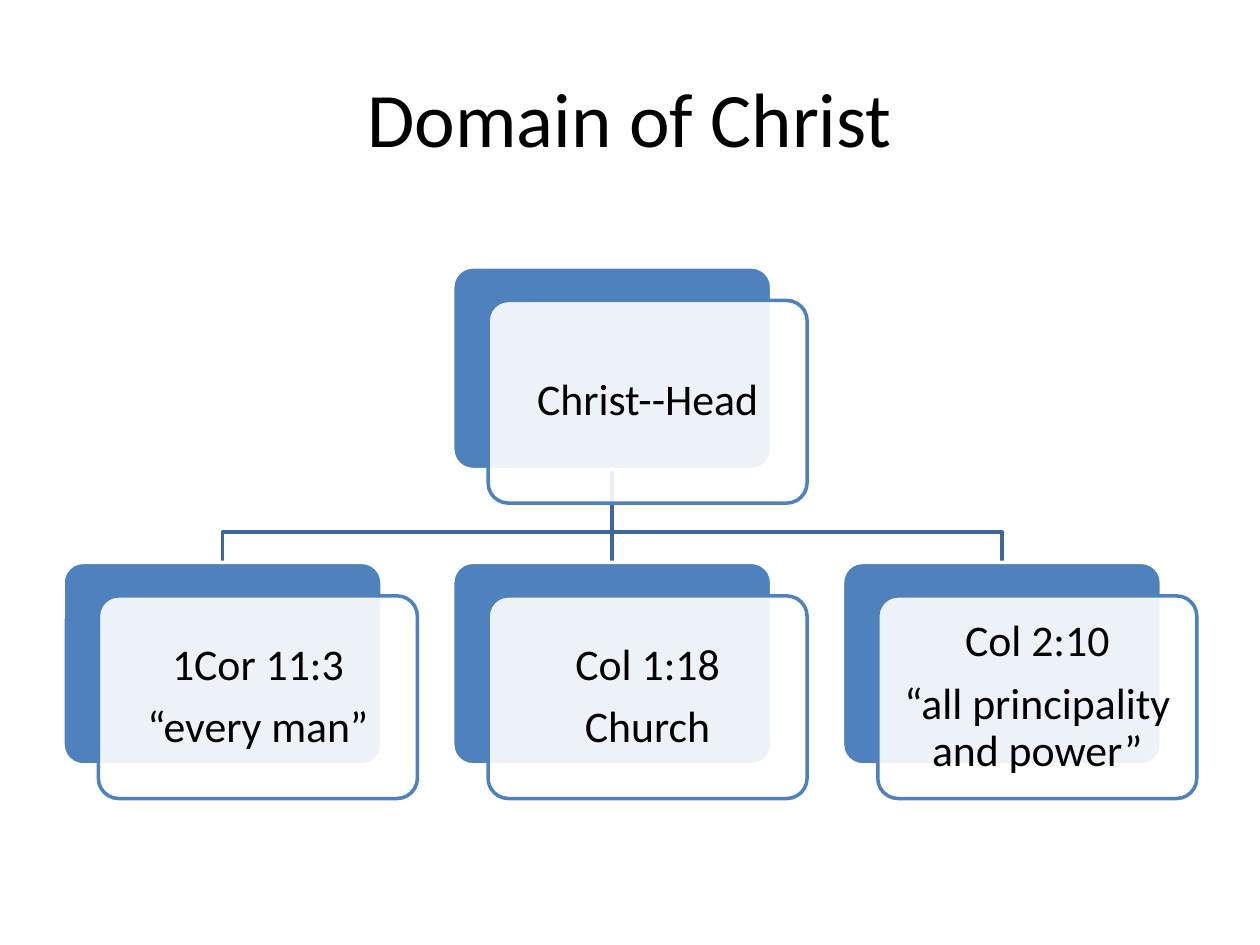
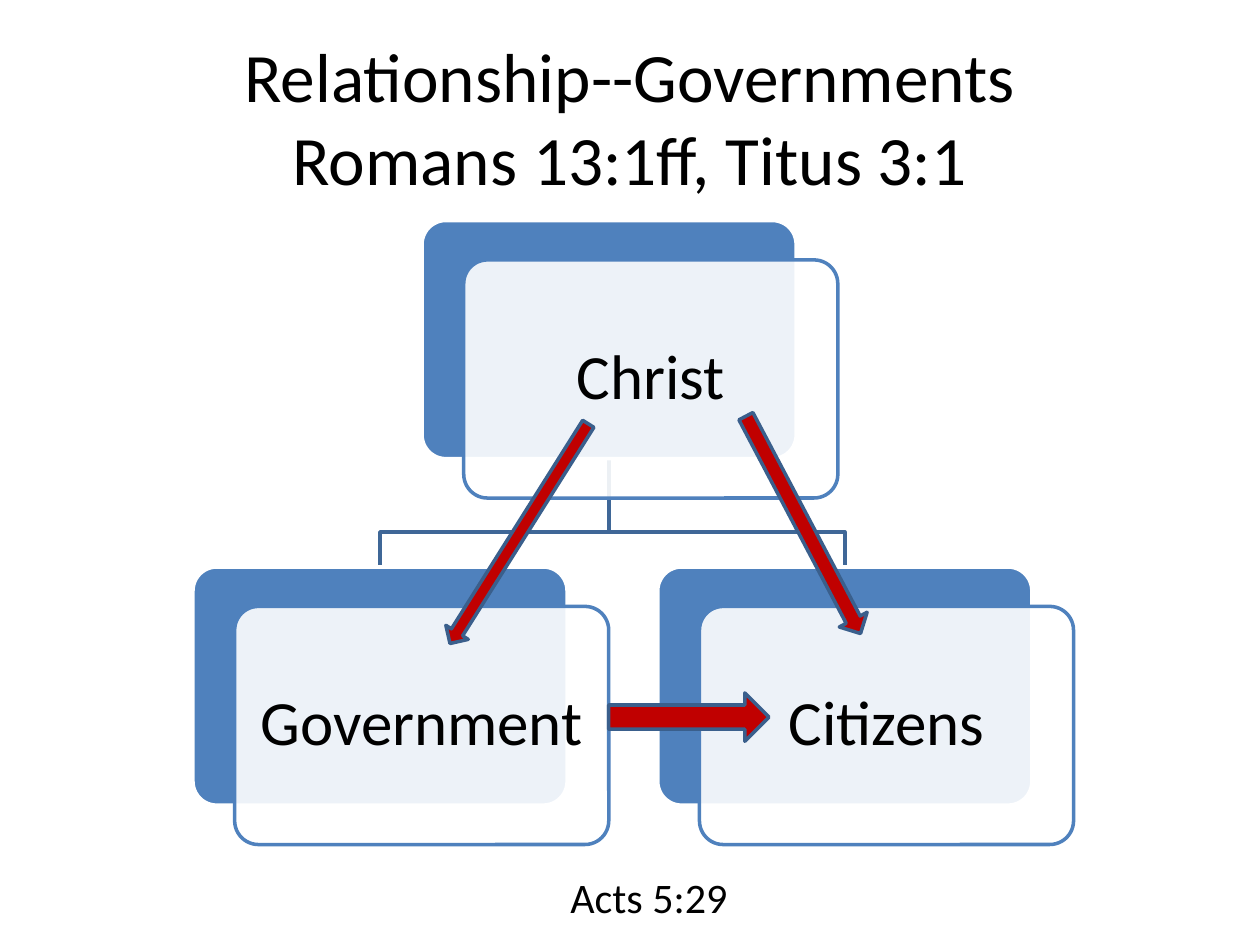
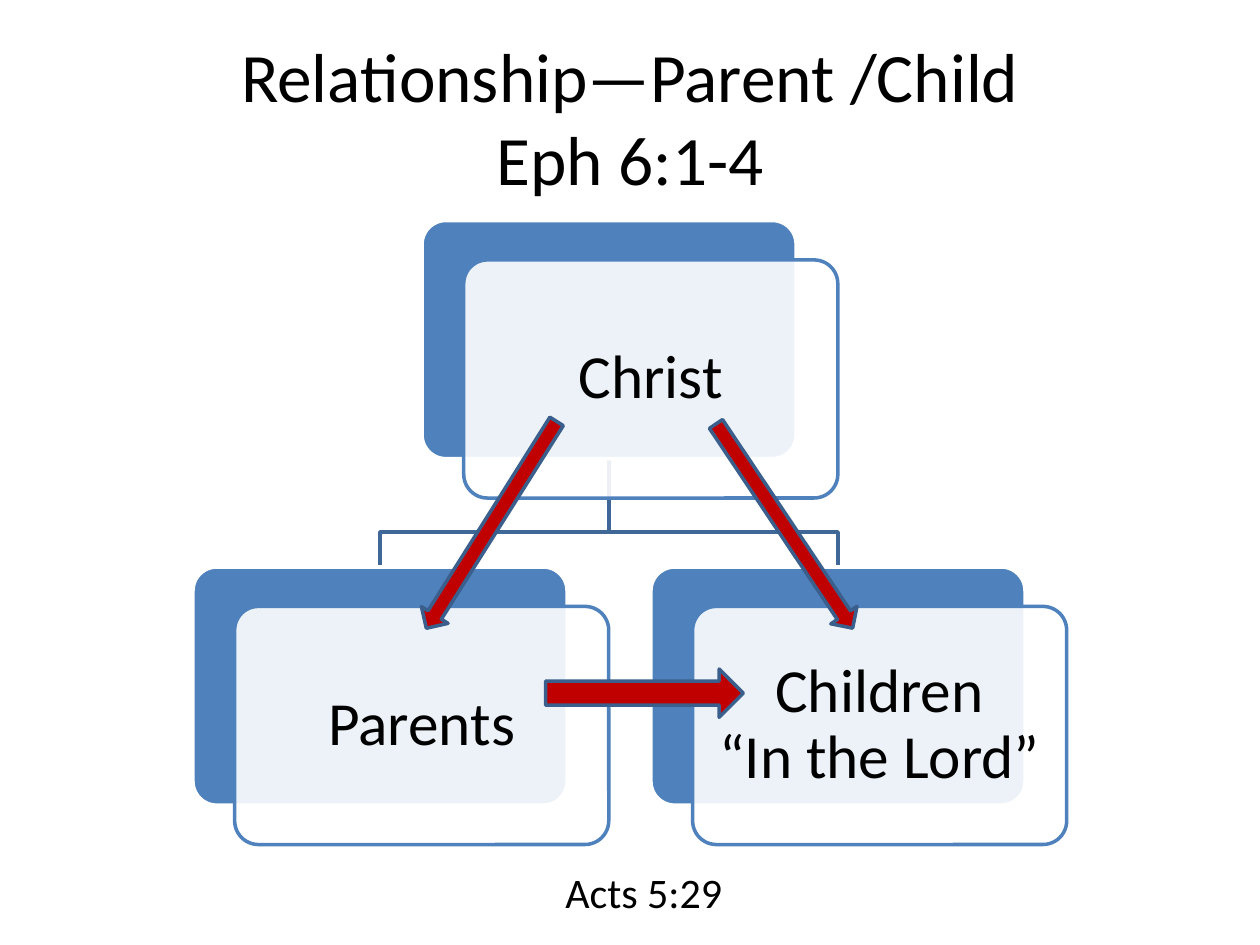
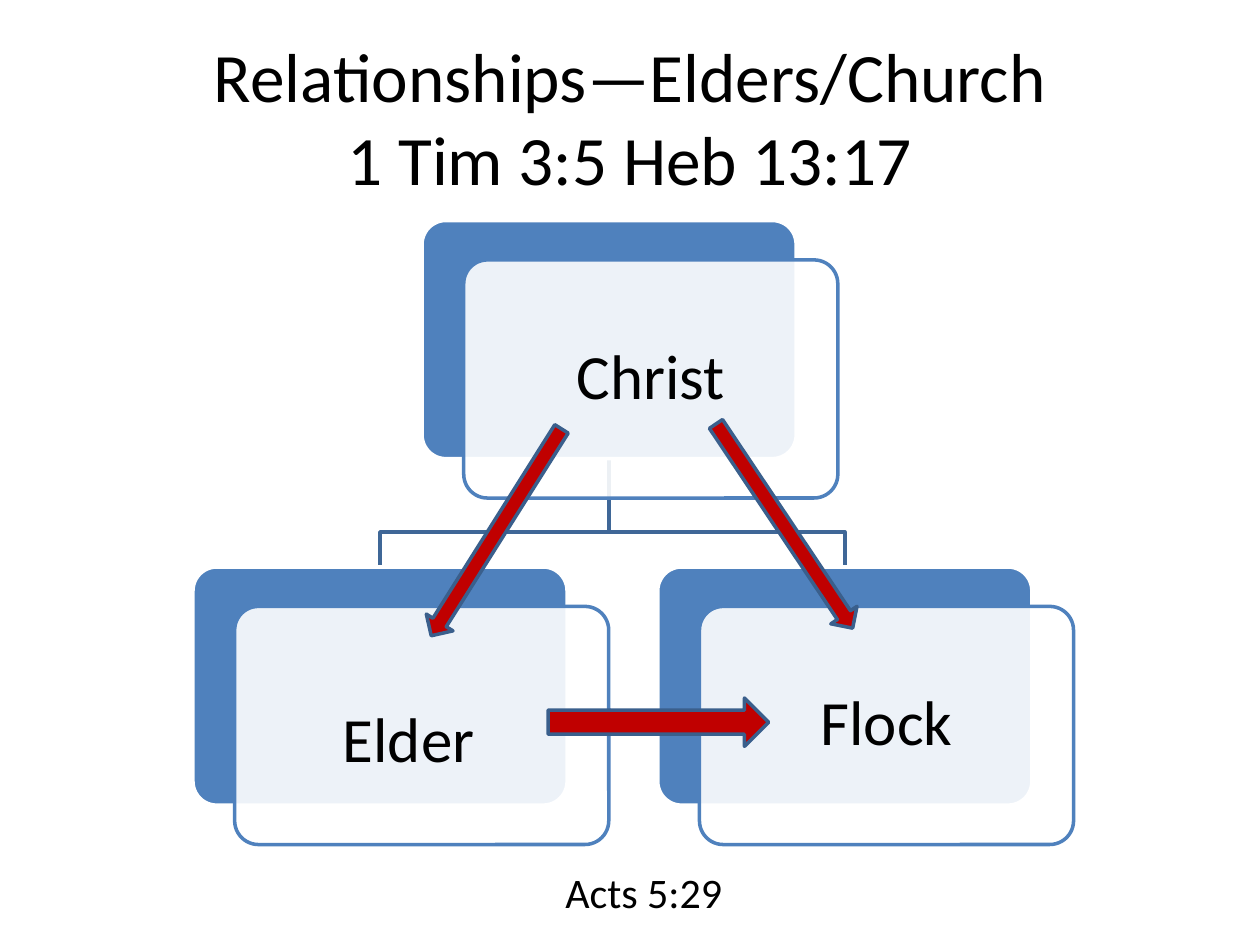
import pptx
import pptx.util
import pptx.dml.color
import pptx.enum.shapes
import pptx.enum.text
import pptx.oxml.ns
import lxml.etree

Pt = pptx.util.Pt
RGB = pptx.dml.color.RGBColor
SHAPE = pptx.enum.shapes.MSO_SHAPE
ALIGN = pptx.enum.text.PP_ALIGN
ANCHOR = pptx.enum.text.MSO_ANCHOR
FIT = pptx.enum.text.MSO_AUTO_SIZE

BLACK = RGB(0x00, 0x00, 0x00)
WHITE = RGB(0xFF, 0xFF, 0xFF)
BLUE = RGB(0x4F, 0x81, 0xBD)
BRANCH_BLUE = RGB(0x3F, 0x67, 0x97)
ARROW_RED = RGB(0xC0, 0x00, 0x00)
ARROW_EDGE = RGB(0x3A, 0x5F, 0x8C)

FONT = "Calibri"
LINE_WIDTH = 2
BEND_Y = 304
TITLE_BOX = (36, 21.6, 648, 90)
CAPTION_SIZE = (174.2, 36.3)

WIDE_TREE = {"card": (182.3, 115.8), "offset": (20.2, 19.2), "inset": 7.2,
             "root": (258.7, 152.5), "child_y": 321.3}
PAIR_TREE = {"card": (213.8, 136.1), "offset": (23.8, 22.5), "inset": 10.8,
             "root": (241.2, 126), "child_y": 324}

SLIDES = [
    {"title": "Domain of Christ", "title_size": 44, "tree": WIDE_TREE, "size": 25,
     "root": ["Christ--Head"],
     "children": [(36, ["1Cor 11:3", "“every man”"]),
                  (258.7, ["Col 1:18", "Church"]),
                  (481.4, ["Col 2:10", "“all principality and power”"])]},
    {"title": "Relationship--Governments\vRomans 13:1ff, Titus 3:1", "title_size": 39.6,
     "tree": PAIR_TREE, "size": 36, "root": ["Christ"],
     "children": [(110.3, ["Government"]), (375.9, ["Citizens"])],
     "arrows": [(SHAPE.RIGHT_ARROW, 347.8, 396, 91.6, 27.6, 0),
                (SHAPE.LEFT_ARROW, 222.5, 297.4, 148.3, 15.1, 302.2),
                (SHAPE.LEFT_ARROW, 388.8, 290.9, 140.4, 18, 242.2)],
     "caption": ("Acts 5:29", 283.7, 494.6)},
    {"title": "Relationship—Parent /Child\vEph 6:1-4", "title_size": 39.6,
     "tree": PAIR_TREE, "size": 35, "root": ["Christ"],
     "children": [(110.3, ["Parents"]), (372, ["Children\v“In the Lord”"])],
     "arrows": [(SHAPE.RIGHT_ARROW, 311.8, 382.3, 113, 27.6, 0),
                (SHAPE.LEFT_ARROW, 211, 290.9, 139.7, 18, 302.2),
                (SHAPE.LEFT_ARROW, 378, 291.6, 140.4, 18, 236.2)],
     "caption": ("Acts 5:29", 280.8, 491.8)},
    {"title": "Relationships—Elders/Church\v1 Tim 3:5 Heb 13:17", "title_size": 39.6,
     "tree": PAIR_TREE, "size": 36, "root": ["Christ"],
     "children": [(110.3, ["Elder"], (15, 19)), (375.9, ["Flock"])],
     "arrows": [(SHAPE.RIGHT_ARROW, 313.2, 398.9, 126, 27.6, 0),
                (SHAPE.LEFT_ARROW, 213.8, 295.2, 139.7, 18, 302.2),
                (SHAPE.LEFT_ARROW, 378, 291.6, 140.4, 18, 236.2)],
     "caption": ("Acts 5:29", 280.8, 491.8)},
]


def points(*values):
    return [Pt(value) for value in values]


def style_text(para, size):
    para.alignment = ALIGN.CENTER
    for span in para.runs:
        span.font.name = FONT
        span.font.size = Pt(size)
        span.font.color.rgb = BLACK


def outline(shape, color):
    shape.shadow.inherit = False
    shape.line.color.rgb = color
    shape.line.width = Pt(LINE_WIDTH)


def add_filled(page, kind, box, fill, edge):
    shape = page.shapes.add_shape(kind, *points(*box))
    shape.fill.solid()
    shape.fill.fore_color.rgb = fill
    outline(shape, edge)
    return shape


def add_title(page, text, size):
    title = page.shapes.title
    title.left, title.top, title.width, title.height = points(*TITLE_BOX)
    title.text_frame.text = text
    title.text_frame.auto_size = FIT.NONE
    title.text_frame.vertical_anchor = ANCHOR.MIDDLE
    style_text(title.text_frame.paragraphs[0], size)


def add_branch(page, start, end):
    route = [start, (start[0], BEND_Y), (end[0], BEND_Y), end]
    if abs(start[0] - end[0]) < 1:
        branch = page.shapes.add_connector(
            pptx.enum.shapes.MSO_CONNECTOR.STRAIGHT, *points(*start, *end))
        lxml.etree.SubElement(branch._element.spPr, pptx.oxml.ns.qn("a:effectLst"))
        branch.line.color.rgb = BRANCH_BLUE
        branch.line.width = Pt(LINE_WIDTH)
        return
    builder = page.shapes.build_freeform(*points(*route[0]))
    builder.add_line_segments([points(*spot) for spot in route[1:]], close=False)
    branch = builder.convert_to_shape()
    branch.fill.background()
    outline(branch, BRANCH_BLUE)


def add_card(page, tree, left, top, lines, size, shift=(0, 0)):
    dx, dy = tree["offset"]
    back = add_filled(page, SHAPE.ROUNDED_RECTANGLE, (left, top, *tree["card"]), BLUE, WHITE)
    front = add_filled(page, SHAPE.ROUNDED_RECTANGLE,
                       (left + dx, top + dy, *tree["card"]), WHITE, BLUE)
    for shape in (back, front):
        shape.adjustments[0] = 0.1
    color = front._element.spPr.find(pptx.oxml.ns.qn("a:solidFill"))[0]
    lxml.etree.SubElement(color, pptx.oxml.ns.qn("a:alpha"), val="90000")

    frame = front.text_frame
    frame.word_wrap = True
    frame.vertical_anchor = ANCHOR.MIDDLE
    inset = tree["inset"]
    frame.margin_left = frame.margin_bottom = Pt(inset)
    frame.margin_right = Pt(inset + shift[0])
    frame.margin_top = Pt(inset + shift[1])
    frame.text = "\n".join(lines)
    for para in frame.paragraphs:
        para.line_spacing = 0.9
        para.space_after = Pt(0.35 * size)
        style_text(para, size)


def add_tree(page, content):
    tree = content["tree"]
    width, height = tree["card"]
    root_x, root_y = tree["root"]
    start = (root_x + width / 2, root_y + height)
    for child in reversed(content["children"]):
        add_branch(page, start, (child[0] + width / 2, tree["child_y"]))
    add_card(page, tree, root_x, root_y, content["root"], content["size"])
    for left, lines, *shift in content["children"]:
        add_card(page, tree, left, tree["child_y"], lines, content["size"], *shift)


def add_caption(page, text, left, top):
    box = page.shapes.add_textbox(*points(left, top, *CAPTION_SIZE))
    box.text_frame.word_wrap = True
    box.text_frame.auto_size = FIT.SHAPE_TO_FIT_TEXT
    box.text_frame.text = text
    style_text(box.text_frame.paragraphs[0], 24)


def main():
    deck = pptx.Presentation()
    deck.slide_width, deck.slide_height = points(720, 540)
    for content in SLIDES:
        page = deck.slides.add_slide(deck.slide_layouts.get_by_name("Title Only"))
        add_title(page, content["title"], content["title_size"])
        add_tree(page, content)
        for kind, left, top, width, height, turn in content.get("arrows", []):
            arrow = add_filled(page, kind, (left, top, width, height), ARROW_RED, ARROW_EDGE)
            arrow.rotation = turn
        if "caption" in content:
            add_caption(page, *content["caption"])
    deck.save("out.pptx")


if __name__ == "__main__":
    main()
